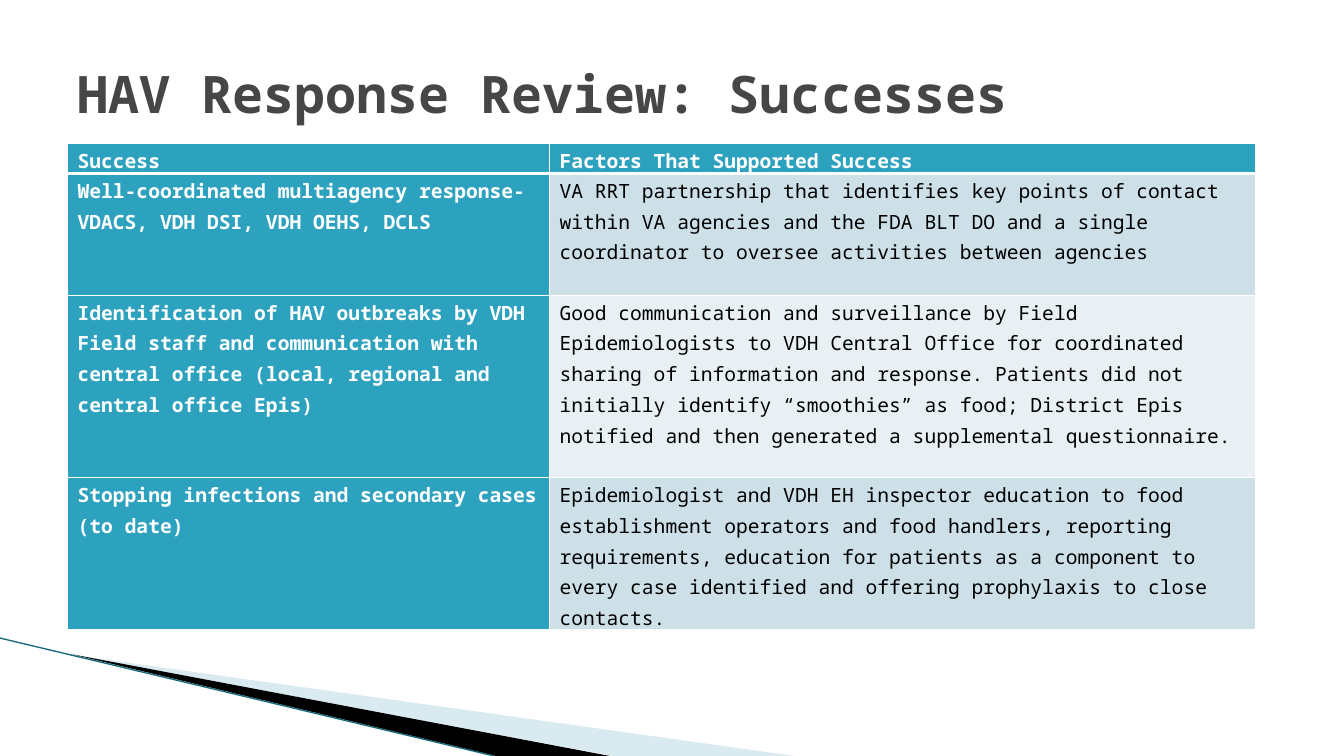
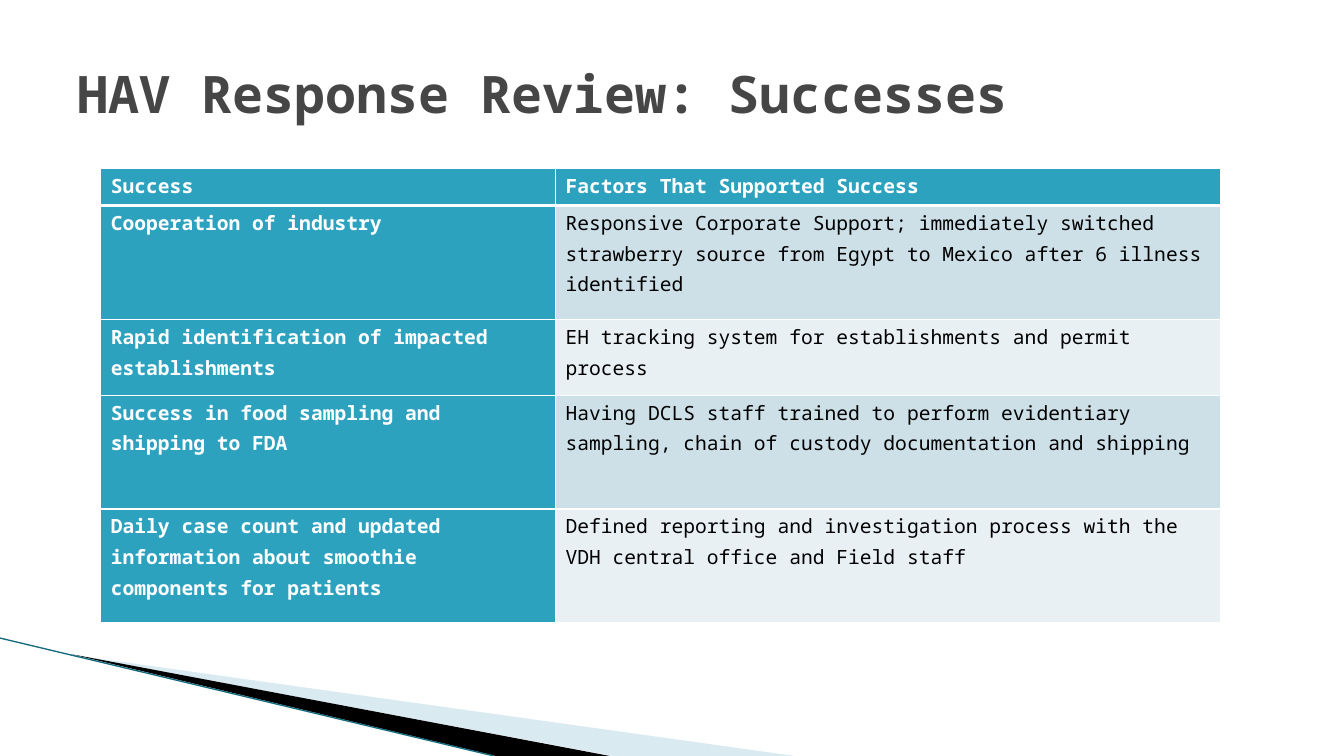
from pptx import Presentation
from pptx.dml.color import RGBColor
from pptx.enum.shapes import MSO_CONNECTOR
from pptx.enum.text import MSO_ANCHOR
from pptx.oxml.ns import qn
from pptx.util import Inches, Pt
from lxml.etree import SubElement

FONT = "Noto Sans Mono"
WHITE = RGBColor(0xFF, 0xFF, 0xFF)
BLACK = RGBColor(0, 0, 0)
TITLE_GRAY = RGBColor(0x46, 0x46, 0x46)
TEAL = RGBColor(0x2D, 0xA2, 0xBF)
DARK_TEAL = RGBColor(0x16, 0x6C, 0x7E)
PALE_BLUE = RGBColor(0xA0, 0xCB, 0xDC)
ROW_BANDS = (RGBColor(0xCD, 0xE0, 0xE8), RGBColor(0xE8, 0xF0, 0xF4))

TITLE = "HAV Response Review: Successes"
TITLE_BOX = (0.67, 0.3, 12, 1.25)
HEADER = ("Success", "Factors That Supported Success")

# Each slide: table origin, column widths, row heights, body rows
SLIDES = [
    ((0.67, 1.42), (4.78, 7), (0.3, 1.21, 1.81, 1.51), [
        ("Well-coordinated multiagency response- VDACS, VDH DSI, VDH OEHS, DCLS",
         "VA RRT partnership that identifies key points of contact within VA agencies "
         "and the FDA BLT DO and a single coordinator to oversee activities between agencies"),
        ("Identification of HAV outbreaks by VDH Field staff and communication with "
         "central office (local, regional and central office Epis)",
         "Good communication and surveillance by Field Epidemiologists to VDH Central "
         "Office for coordinated sharing of information and response. Patients did not "
         "initially identify “smoothies” as food; District Epis notified and then "
         "generated a supplemental questionnaire."),
        ("Stopping infections and secondary cases (to date)",
         "Epidemiologist and VDH EH inspector education to food establishment operators "
         "and food handlers, reporting requirements, education for patients as a component "
         "to every case identified and offering prophylaxis to close contacts."),
    ]),
    ((1, 1.67), (4.51, 6.6), (0.37, 1.13, 0.75, 1.13, 1.13), [
        ("Cooperation of industry",
         "Responsive Corporate Support; immediately switched strawberry source from "
         "Egypt to Mexico after 6 illness identified"),
        ("Rapid identification of impacted establishments",
         "EH tracking system for establishments and permit process"),
        ("Success in food sampling and shipping to FDA",
         "Having DCLS staff trained to perform evidentiary sampling, chain of custody "
         "documentation and shipping"),
        ("Daily case count and updated information about smoothie components for patients",
         "Defined reporting and investigation process with the VDH central office and "
         "Field staff"),
    ]),
]


def style_paragraph(paragraph, size, color, bold):
    font = paragraph.font
    font.name, font.size, font.bold = FONT, Pt(size), bold
    font.color.rgb = color


def add_wedge(slide, points, color, opacity=100):
    start, *rest = [(Inches(x), Inches(y)) for x, y in points]
    builder = slide.shapes.build_freeform(*start)
    builder.add_line_segments(rest, close=True)
    wedge = builder.convert_to_shape()
    wedge.shadow.inherit = False
    wedge.line.fill.background()
    wedge.fill.solid()
    wedge.fill.fore_color.rgb = color
    if opacity < 100:
        tint = wedge.fill._xPr.find(".//" + qn("a:srgbClr"))
        SubElement(tint, qn("a:alpha"), val=str(opacity * 1000))


def add_corner_sweep(slide):
    """Wedges and thin line in the lower left corner."""
    add_wedge(slide, [(0.73, 6.5), (7.88, 7.5), (6.08, 7.5)], PALE_BLUE, 40)
    add_wedge(slide, [(0.71, 6.49), (6.05, 7.5), (4.92, 7.5)], BLACK)
    edge = slide.shapes.add_connector(
        MSO_CONNECTOR.STRAIGHT, Inches(0), Inches(6.33), Inches(4.9), Inches(7.5))
    edge.line.color.rgb = DARK_TEAL
    edge.line.width = Pt(0.95)
    SubElement(edge._element.spPr, qn("a:effectLst"))


def add_title(slide, box):
    frame = slide.shapes.add_textbox(*map(Inches, box)).text_frame
    frame.word_wrap = True
    frame.vertical_anchor = MSO_ANCHOR.MIDDLE
    frame.text = TITLE
    style_paragraph(frame.paragraphs[0], 36.9, TITLE_GRAY, True)


def set_borders(cell, top, bottom):
    """White cell borders; top and bottom widths are in points."""
    properties = cell._tc.get_or_add_tcPr()
    for side, width in (("L", 1), ("R", 1), ("T", top), ("B", bottom)):
        border = SubElement(properties, qn("a:ln" + side), w=str(Pt(width)))
        fill = SubElement(border, qn("a:solidFill"))
        SubElement(fill, qn("a:srgbClr"), val=str(WHITE))


def fill_cell(cell, text, row, column):
    is_label = row == 0 or column == 0
    cell.margin_left = cell.margin_right = Inches(0.1)
    cell.margin_top = cell.margin_bottom = 0
    # The rule under the header is heavier than the others
    set_borders(cell, top=3 if row == 1 else 1, bottom=3 if row == 0 else 1)
    cell.fill.solid()
    cell.fill.fore_color.rgb = TEAL if is_label else ROW_BANDS[(row - 1) % 2]
    cell.text = text
    paragraph = cell.text_frame.paragraphs[0]
    paragraph.line_spacing = 1.15
    style_paragraph(paragraph, 14, WHITE if is_label else BLACK, is_label)


def add_success_table(slide, origin, widths, heights, body):
    box = (*origin, sum(widths), sum(heights))
    table = slide.shapes.add_table(
        len(heights), len(widths), *map(Inches, box)).table
    for column, width in zip(table.columns, widths):
        column.width = Inches(width)
    for row, height in zip(table.rows, heights):
        row.height = Inches(height)
    for r, texts in enumerate([HEADER, *body]):
        for c, text in enumerate(texts):
            fill_cell(table.cell(r, c), text, r, c)


def main():
    deck = Presentation()
    deck.slide_width, deck.slide_height = Inches(13.33), Inches(7.5)
    for table_parts in SLIDES:
        slide = deck.slides.add_slide(deck.slide_layouts[6])
        add_corner_sweep(slide)
        add_title(slide, TITLE_BOX)
        add_success_table(slide, *table_parts)
    deck.save("out.pptx")


if __name__ == "__main__":
    main()
